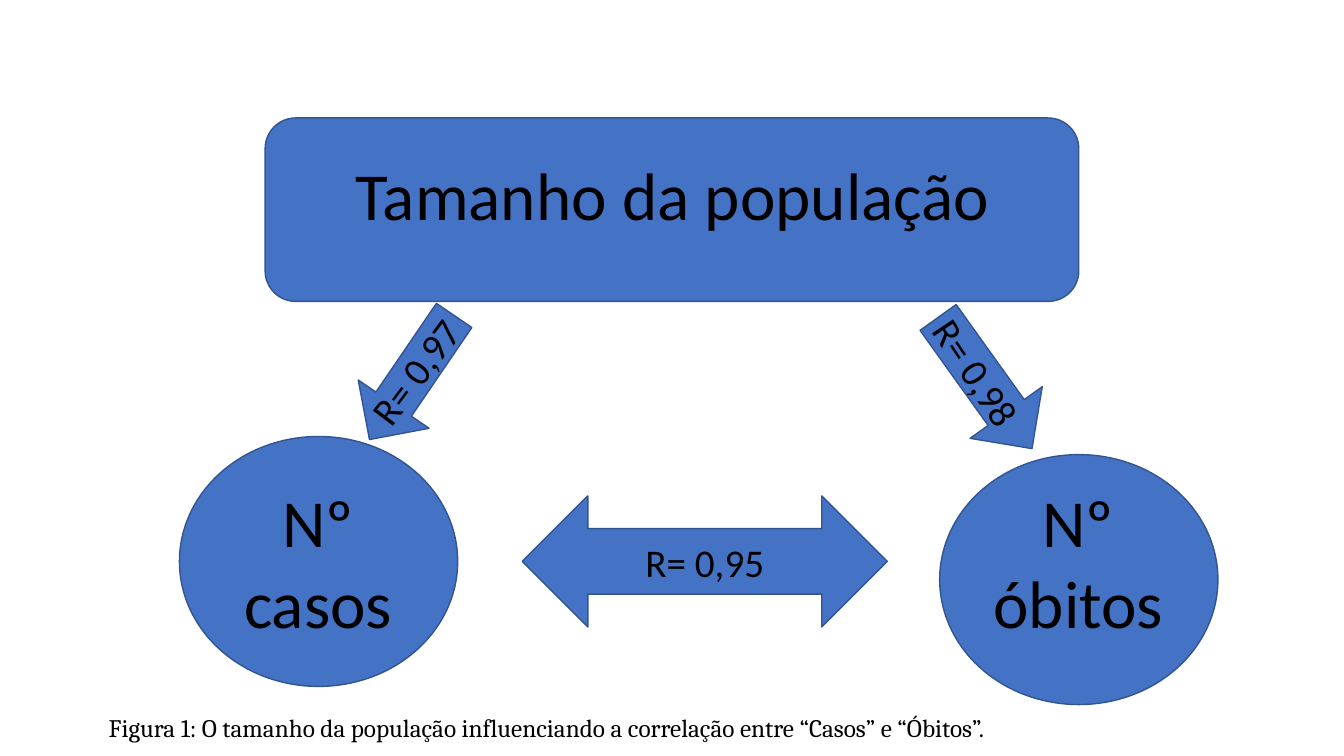
from dataclasses import dataclass

from pptx import Presentation
from pptx.dml.color import RGBColor
from pptx.enum.shapes import MSO_SHAPE
from pptx.enum.text import MSO_AUTO_SIZE, PP_ALIGN
from pptx.util import Inches, Pt

ROUNDED = MSO_SHAPE.ROUNDED_RECTANGLE
ELLIPSE = MSO_SHAPE.OVAL
DOWN_ARROW = MSO_SHAPE.DOWN_ARROW
DOUBLE_ARROW = MSO_SHAPE.LEFT_RIGHT_ARROW
GROW = MSO_AUTO_SIZE.SHAPE_TO_FIT_TEXT
CENTER = PP_ALIGN.CENTER
JUSTIFY = PP_ALIGN.JUSTIFY


@dataclass(frozen=True)
class Theme:
    """Colours, fonts and type sizes of the slide."""
    fill: RGBColor = RGBColor(0x44, 0x72, 0xC4)
    line: RGBColor = RGBColor(0x32, 0x54, 0x91)
    ink: RGBColor = RGBColor(0, 0, 0)
    line_width: Pt = Pt(1)
    body_font: str = "Calibri"
    caption_font: str = "Cambria"
    title_size: Pt = Pt(48)
    label_size: Pt = Pt(28)
    caption_size: Pt = Pt(18)


THEME = Theme()
TITLE_FONT = {"name": THEME.body_font, "size": THEME.title_size}
LABEL_FONT = {"name": THEME.body_font, "size": THEME.label_size}
CAPTION_FONT = {"name": THEME.caption_font, "size": THEME.caption_size}
CENTERED = {"alignment": CENTER}
CAPTION_FORMAT = {"alignment": JUSTIFY, "line_spacing": 1.07, "space_after": Pt(8)}


def apply_format(target, values):
    """Set each attribute named in a dict of format values."""
    for name, value in values.items():
        setattr(target, name, value)


def add_figure(page, kind, box, rotation=0):
    """Draw a filled and outlined preset shape in a box."""
    figure = page.shapes.add_shape(kind, *map(Inches, box))
    figure.rotation = rotation
    figure.shadow.inherit = False
    figure.fill.solid()
    figure.fill.fore_color.rgb = THEME.fill
    figure.line.color.rgb = THEME.line
    figure.line.width = THEME.line_width


def add_text(page, lines, box, font, layout=CENTERED, rotation=0):
    """Write one paragraph per line in a text box."""
    label = page.shapes.add_textbox(*map(Inches, box))
    label.rotation = rotation
    frame = label.text_frame
    apply_format(frame, {"word_wrap": True, "auto_size": GROW})
    for index, line in enumerate(lines):
        para = frame.add_paragraph() if index else frame.paragraphs[0]
        apply_format(para, layout)
        span = para.add_run()
        span.text = line
        apply_format(span.font, font)
        span.font.color.rgb = THEME.ink


def add_population(page, box):
    """Draw the population panel with its heading."""
    left, top, width, height = box
    add_figure(page, ROUNDED, box)
    text_box = (left + 0.53, top + 0.3, width - 1.05, 0.91)
    add_text(page, ["Tamanho da população"], text_box, TITLE_FONT)


def add_variable(page, name, box, text_top):
    """Draw a circle naming one of the counted variables."""
    left, top, width, height = box
    add_figure(page, ELLIPSE, box)
    text_box = (left + 0.3, text_top, width - 0.61, 1.72)
    add_text(page, ["Nº", name], text_box, TITLE_FONT)


def add_correlation(page, kind, value, box, text_box, turn=0, text_turn=0):
    """Draw an arrow with its coefficient, placed relative to the arrow."""
    left, top, width, height = box
    shift_x, shift_y, text_width = text_box
    add_figure(page, kind, box, turn)
    label_box = (left + shift_x, top + shift_y, text_width, 0.57)
    add_text(page, [f"R= {value}"], label_box, LABEL_FONT, rotation=text_turn)


def add_caption(page, box):
    """Write the figure caption."""
    caption = ("Figura 1: O tamanho da população influenciando "
               "a correlação entre “Casos” e “Óbitos”.")
    add_text(page, [caption], box, CAPTION_FONT, CAPTION_FORMAT)


def build_correlation_slide(deck):
    """Lay out the correlation diagram on a blank page."""
    page = deck.slides.add_slide(deck.slide_layouts[6])
    add_population(page, (2.63, 1.17, 8.07, 1.82))
    add_variable(page, "casos", (1.78, 4.33, 2.76, 2.48), 4.72)
    add_variable(page, "óbitos", (9.32, 4.51, 2.76, 2.48), 4.72)
    add_correlation(page, DOUBLE_ARROW, "0,95", (5.18, 4.92, 3.62, 1.3),
                    (0.99, 0.37, 1.64))
    add_correlation(page, DOWN_ARROW, "0,97", (3.66, 3, 0.85, 1.49),
                    (-0.24, 0.4, 1.39), 34.3, 307)
    add_correlation(page, DOWN_ARROW, "0,98", (9.33, 3, 0.88, 1.6),
                    (-0.34, 0.41, 1.39), 324.4, 56.3)
    add_caption(page, (0.98, 7, 10.38, 0.41))


def main():
    """Build and save the deck."""
    deck = Presentation()
    apply_format(deck, {"slide_width": Inches(13.33), "slide_height": Inches(7.5)})
    build_correlation_slide(deck)
    deck.save("out.pptx")


if __name__ == "__main__":
    main()
